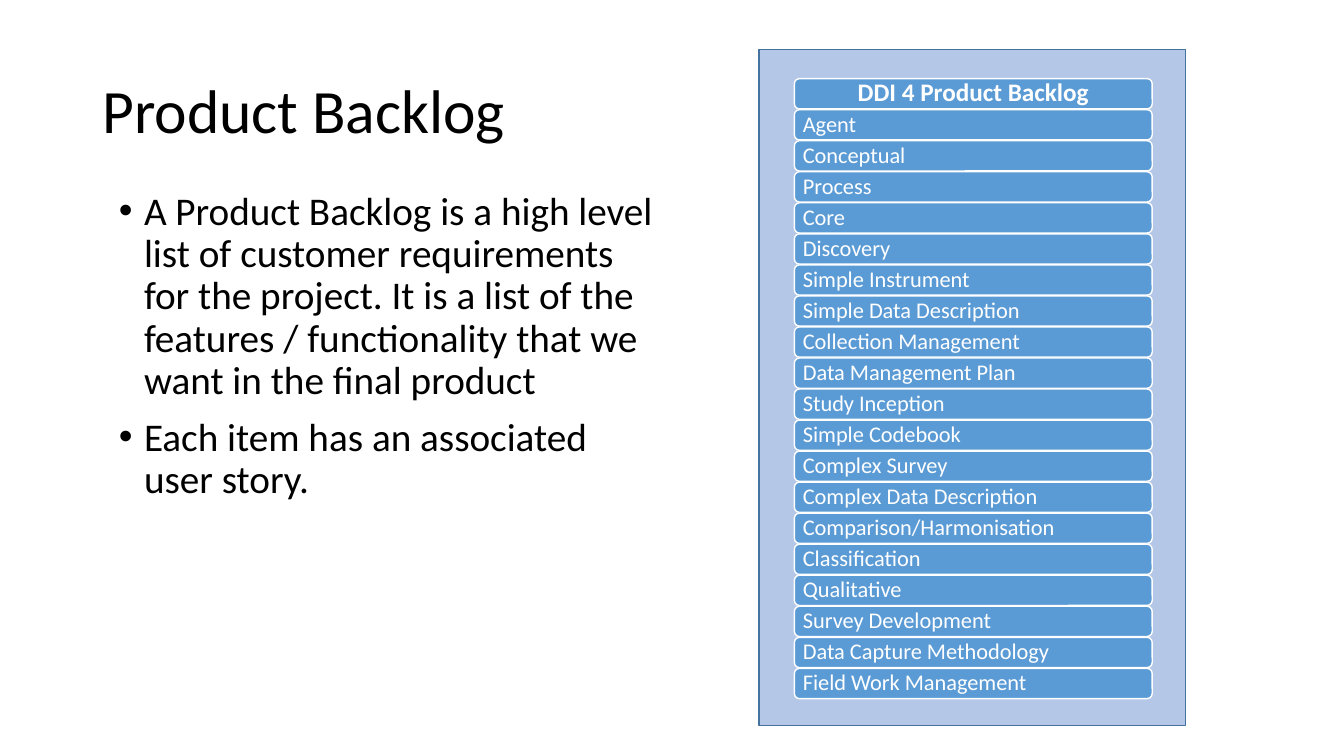
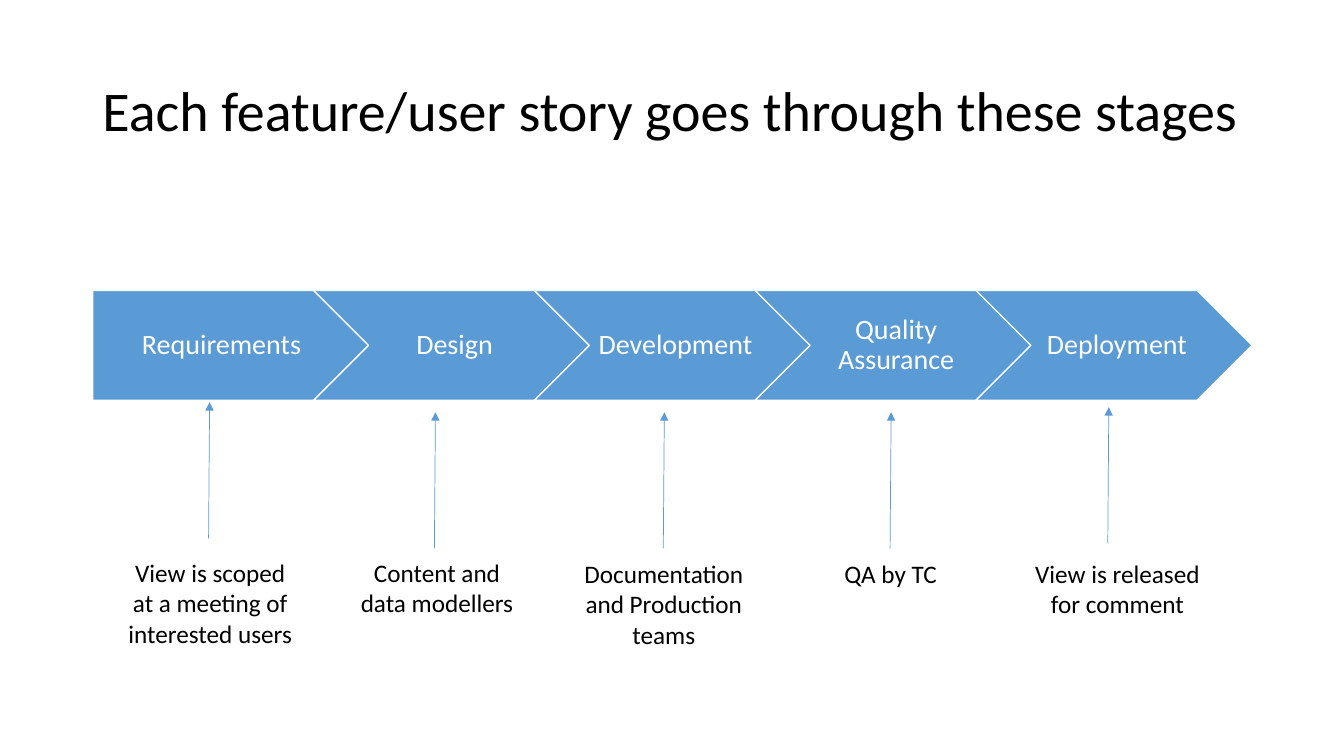
from lxml import etree
from pptx import Presentation
from pptx.dml.color import RGBColor
from pptx.enum.shapes import MSO_CONNECTOR, MSO_SHAPE
from pptx.enum.text import MSO_ANCHOR, MSO_AUTO_SIZE, PP_ALIGN
from pptx.oxml.ns import qn
from pptx.util import Pt

LEFT, CENTER = PP_ALIGN.LEFT, PP_ALIGN.CENTER
TOP, MIDDLE = MSO_ANCHOR.TOP, MSO_ANCHOR.MIDDLE
RECTANGLE, ROUNDED = MSO_SHAPE.RECTANGLE, MSO_SHAPE.ROUNDED_RECTANGLE
PENTAGON, CHEVRON = MSO_SHAPE.PENTAGON, MSO_SHAPE.CHEVRON
STRAIGHT = MSO_CONNECTOR.STRAIGHT
NO_AUTOFIT = MSO_AUTO_SIZE.NONE

FONT = "Calibri"
COLORS = {
    "text": "000000",
    "white": "FFFFFF",
    "blue": "5B9BD5",
    "panel": "B4C7E7",
    "panel_edge": "43739E",
}
TEXT_INSETS = (7.2, 3.6, 7.2, 3.6)

BACKLOG_TITLE = "Product Backlog"
BACKLOG_POINTS = [
    "A Product Backlog is a high level list of customer requirements for the project. "
    "It is a list of the features / functionality that we want in the final product",
    "Each item has an associated user story.",
]
BACKLOG_HEADING = "DDI 4 Product Backlog"
BACKLOG_ITEMS = [
    "Agent", "Conceptual", "Process", "Core", "Discovery", "Simple Instrument",
    "Simple Data Description", "Collection Management", "Data Management Plan",
    "Study Inception", "Simple Codebook", "Complex Survey",
    "Complex Data Description", "Comparison/Harmonisation", "Classification",
    "Qualitative", "Survey Development", "Data Capture Methodology",
    "Field Work Management",
]
PANEL = (542.2, 35.3, 304.5, 483.1)
ROW_LEFT, ROW_TOP, ROW_WIDTH, ROW_HEIGHT, ROW_STEP = 567.4, 56.2, 255.6, 21.6, 22.17

STAGES_TITLE = "Each feature/user story goes through these stages"
# stage, caption, caption top, arrow start x, arrow start y
STAGES = [
    ("Requirements", "View is scoped at a meeting of interested users", 394.6, 149, 384.5),
    ("Design", "Content and data modellers", 394.6, 310.3, 391.7),
    ("Development", "Documentation and Production teams", 395.3, 473.8, 391.7),
    ("Quality Assurance", "QA by TC", 395.3, 635.8, 391.7),
    ("Deployment", "View is released for comment", 395.3, 791.3, 388.1),
]
STAGE_LEFT, STAGE_TOP, STAGE_WIDTH, STAGE_HEIGHT, STAGE_STEP = 66.3, 207.4, 197.3, 78.5, 157.7
CAPTION_LEFT, CAPTION_WIDTH, CAPTION_HEIGHT, CAPTION_STEP = 81.4, 137.5, 73, 162
ARROW_RISE, ARROW_LEAN = 97.2, 0.72


def rgb(name):
    return RGBColor.from_string(COLORS[name])


def write(box, texts, size, color="text", align=LEFT, anchor=TOP,
          insets=TEXT_INSETS, spacing=0.9, bold=False, bullets=False):
    frame = box.text_frame
    frame.word_wrap = True
    frame.auto_size = NO_AUTOFIT
    frame.vertical_anchor = anchor
    (frame.margin_left, frame.margin_top,
     frame.margin_right, frame.margin_bottom) = map(Pt, insets)
    for index, text in enumerate(texts):
        para = frame.add_paragraph() if index else frame.paragraphs[0]
        para.alignment = align
        para.line_spacing = spacing
        if bullets:
            para.space_before = Pt(10)
            properties = para._p.get_or_add_pPr()
            properties.set("marL", str(Pt(18)))
            properties.set("indent", str(-Pt(18)))
            etree.SubElement(properties, qn("a:buFont"), typeface="Arial")
            etree.SubElement(properties, qn("a:buChar"), char="•")
        span = para.add_run()
        span.text = text
        span.font.name = FONT
        span.font.size = Pt(size)
        span.font.bold = bold
        span.font.color.rgb = rgb(color)


def add_page(deck, title, size):
    page = deck.slides.add_slide(deck.slide_layouts[5])
    box = page.shapes.title
    box.left, box.top, box.width, box.height = map(Pt, (66, 28.8, 828, 104.4))
    write(box, [title], size, anchor=MIDDLE)
    return page


def add_block(page, kind, place, fill="blue", line="white"):
    block = page.shapes.add_shape(kind, *map(Pt, place))
    block.shadow.inherit = False
    block.fill.solid()
    block.fill.fore_color.rgb = rgb(fill)
    block.line.color.rgb = rgb(line)
    block.line.width = Pt(1)
    return block


def add_text(page, place, texts, size, **style):
    box = page.shapes.add_textbox(*map(Pt, place))
    write(box, texts, size, **style)


def add_arrow(page, start_x, start_y):
    ends = (start_x, start_y, start_x + ARROW_LEAN, start_y - ARROW_RISE)
    arrow = page.shapes.add_connector(STRAIGHT, *map(Pt, ends))
    arrow.line.color.rgb = rgb("blue")
    arrow.line.width = Pt(0.5)
    etree.SubElement(arrow.line._get_or_add_ln(), qn("a:tailEnd"), type="triangle")
    etree.SubElement(arrow._element.spPr, qn("a:effectLst"))


def build_backlog(deck):
    page = add_page(deck, BACKLOG_TITLE, 44)
    add_block(page, RECTANGLE, PANEL, "panel", "panel_edge")
    add_text(page, (77.8, 133.2, 400.3, 342.7), BACKLOG_POINTS, 28, bullets=True)
    for index, text in enumerate([BACKLOG_HEADING] + BACKLOG_ITEMS):
        heading = index == 0
        row = add_block(page, ROUNDED, (ROW_LEFT, ROW_TOP + index * ROW_STEP,
                                        ROW_WIDTH, ROW_HEIGHT))
        write(row, [text], 18 if heading else 16, "white",
              CENTER if heading else LEFT, MIDDLE, (5, 0, 5, 0), bold=heading)


def build_stages(deck):
    page = add_page(deck, STAGES_TITLE, 40)
    for index, (stage, caption, caption_top, arrow_x, arrow_y) in enumerate(STAGES):
        block = add_block(page, CHEVRON if index else PENTAGON,
                          (STAGE_LEFT + index * STAGE_STEP, STAGE_TOP,
                           STAGE_WIDTH, STAGE_HEIGHT))
        write(block, [stage], 20, "white", CENTER, MIDDLE,
              (6.3 if index else 8.4, 4.2, 2.1, 4.2))
        add_text(page, (CAPTION_LEFT + index * CAPTION_STEP, caption_top,
                        CAPTION_WIDTH, CAPTION_HEIGHT),
                 [caption], 18, align=CENTER, spacing=1.0)
        add_arrow(page, arrow_x, arrow_y)


def main():
    deck = Presentation()
    deck.slide_width, deck.slide_height = Pt(960), Pt(540)
    build_backlog(deck)
    build_stages(deck)
    deck.save("out.pptx")


if __name__ == "__main__":
    main()
